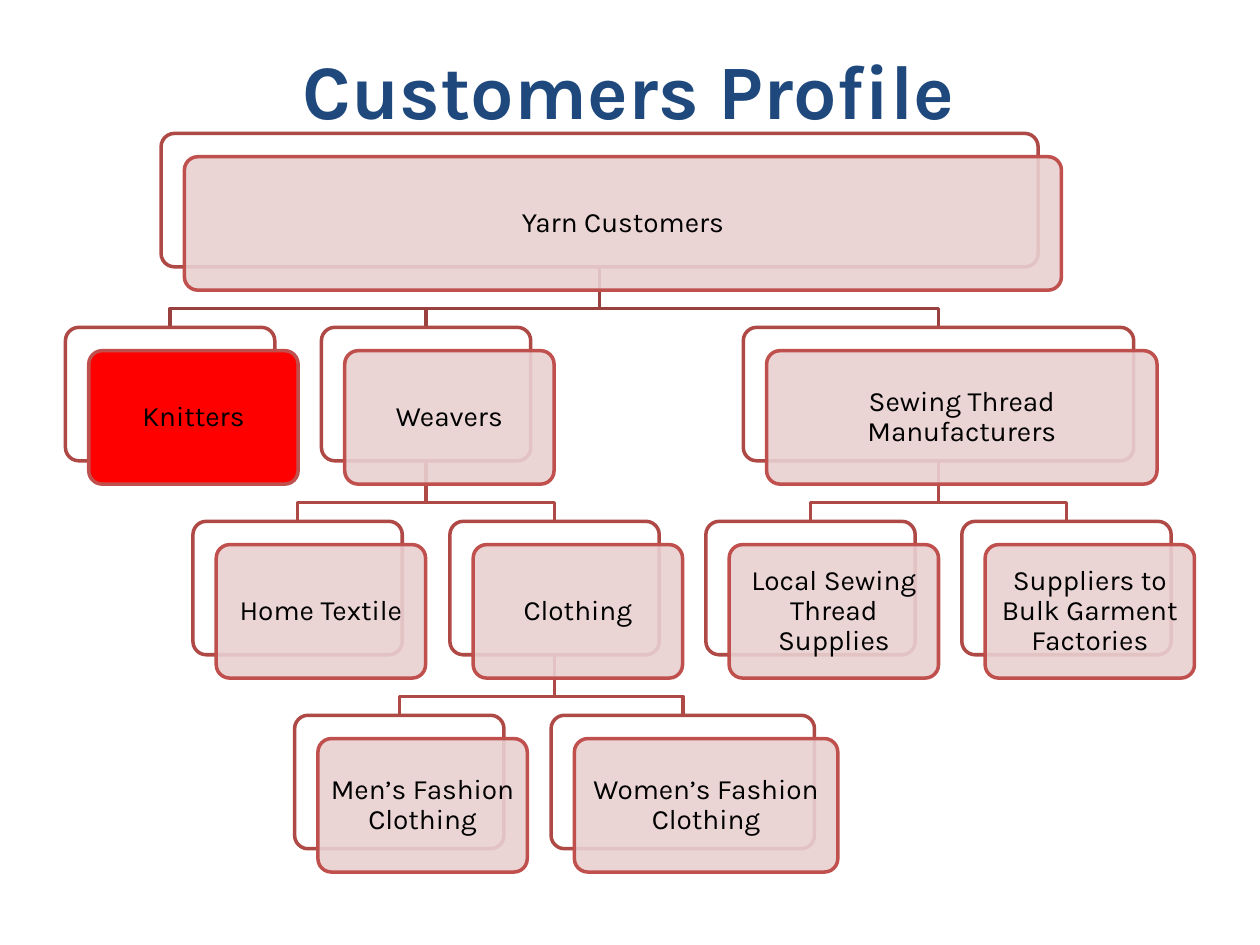
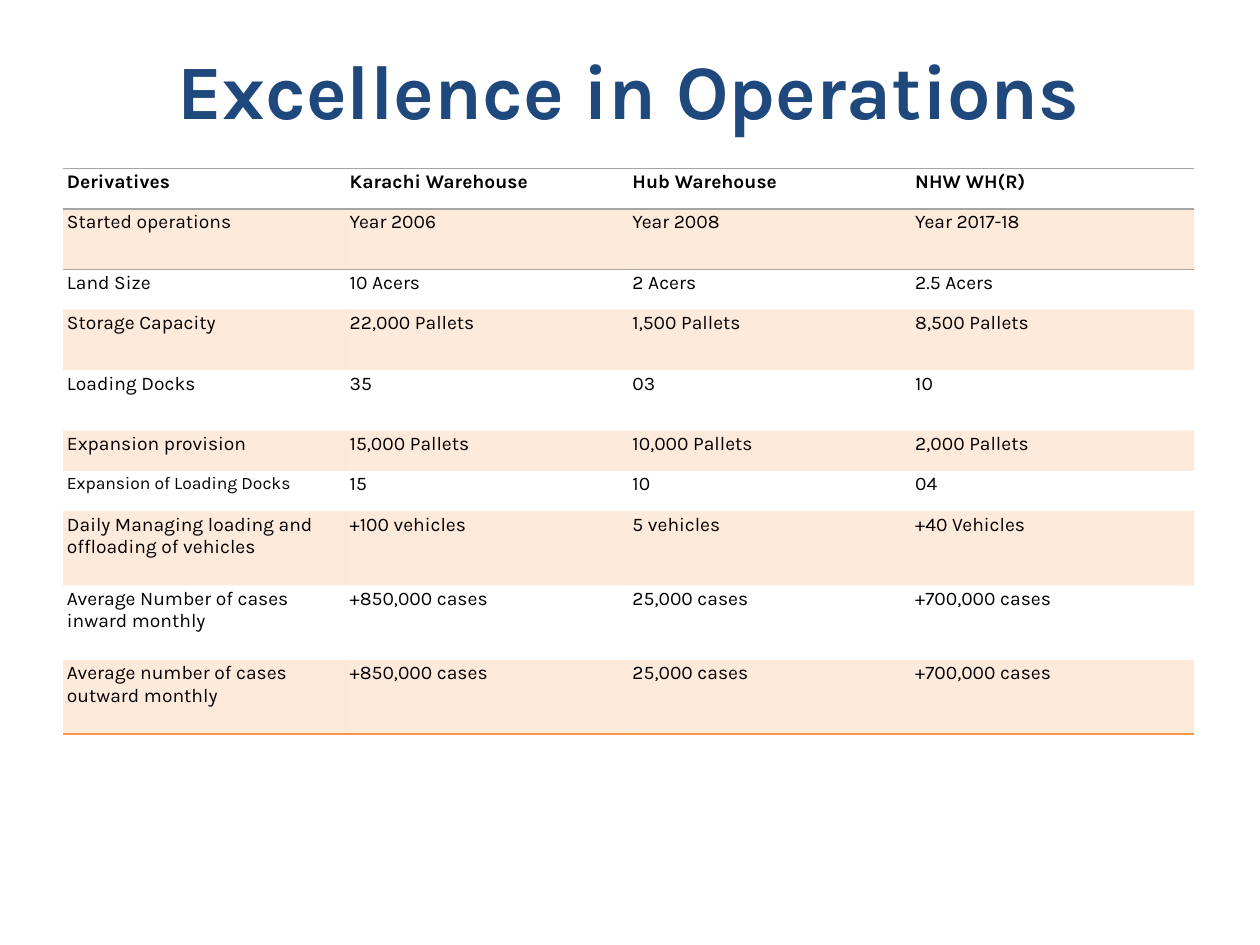
import dataclasses
import pptx
import pptx.dml.color
import pptx.enum.shapes
import pptx.enum.text
import pptx.oxml
import pptx.oxml.ns
import pptx.util
import lxml.etree

Cm = pptx.util.Cm
qn = pptx.oxml.ns.qn


@dataclasses.dataclass(frozen=True)
class Theme:
    font: str = "Karla"
    title: str = "1F497D"
    ink: str = "000000"
    paper: str = "FFFFFF"
    card: str = "E8D0D0"
    highlight: str = "FF0000"
    card_edge: str = "C0504D"
    back_edge: str = "AE4946"
    root_link: str = "9A403E"
    band: str = "F79646"
    header_rule: str = "A5A5A5"
    title_size: float = 44
    card_size: float = 16
    table_size: float = 11
    small_size: float = 10
    line_width: float = 2


@dataclasses.dataclass
class Node:
    text: str
    left: float = 0
    width: float = 4.22
    children: tuple = ()
    highlighted: bool = False

    def __post_init__(self):
        if self.children:
            first = min(child.left for child in self.children)
            last = max(child.left + child.width for child in self.children)
            self.left = (first + last - self.width) / 2

    @property
    def center(self):
        return self.left + self.width / 2


CARD_HEIGHT = 2.69
CARD_OFFSET = 0.47
LEVEL_TOP = 2.69
LEVEL_PITCH = 3.91
LINK_BEND = 0.84

CUSTOMERS = Node("Yarn Customers", width=17.68, children=(
    Node("Knitters", 1.32, highlighted=True),
    Node("Weavers", children=(
        Node("Home Textile", 3.89),
        Node("Clothing", children=(
            Node("Men’s Fashion Clothing", 5.94),
            Node("Women’s Fashion Clothing", 11.11, 5.31),
        )),
    )),
    Node("Sewing Thread Manufacturers", width=7.87, children=(
        Node("Local Sewing Thread Supplies", 14.23),
        Node("Suppliers to Bulk Garment Factories", 19.39),
    )),
))

WAREHOUSE_ROWS = (
    (0.81, "Derivatives", "Karachi Warehouse", "Hub Warehouse", "NHW WH(R)"),
    (1.22, "Started operations", "Year 2006", "Year 2008", "Year 2017-18"),
    (0.81, "Land Size", "10 Acers", "2 Acers", "2.5 Acers"),
    (1.22, "Storage Capacity", "22,000 Pallets", "1,500 Pallets", "8,500 Pallets"),
    (1.22, "Loading Docks", "35", "03", "10"),
    (0.81, "Expansion provision", "15,000 Pallets", "10,000 Pallets", "2,000 Pallets"),
    (0.81, "Expansion of Loading Docks", "15", "10", "04"),
    (1.5, "Daily Managing loading and offloading of vehicles",
     "+100 vehicles", "5 vehicles", "+40 Vehicles"),
    (1.5, "Average Number of cases inward monthly",
     "+850,000 cases", "25,000 cases", "+700,000 cases"),
    (1.5, "Average number of cases outward monthly",
     "+850,000 cases", "25,000 cases", "+700,000 cases"),
)


def rgb(color):
    return pptx.dml.color.RGBColor.from_string(color)


def write_text(frame, text, *, font, size, color, bold=False, align="LEFT",
               anchor="MIDDLE", spacing=1.0):
    frame.word_wrap = True
    frame.vertical_anchor = getattr(pptx.enum.text.MSO_ANCHOR, anchor)
    para = frame.paragraphs[0]
    para.alignment = getattr(pptx.enum.text.PP_ALIGN, align)
    para.line_spacing = spacing
    span = para.add_run()
    span.text = text
    span.font.name = font
    span.font.size = pptx.util.Pt(size)
    span.font.bold = bold
    span.font.color.rgb = rgb(color)


def paint(fill, properties, color, opacity=100):
    fill.solid()
    fill.fore_color.rgb = rgb(color)
    if opacity < 100:
        tint = properties.find(qn("a:solidFill"))[0]
        lxml.etree.SubElement(tint, qn("a:alpha"), val=str(opacity * 1000))


def add_rule(properties, side, color):
    rule = lxml.etree.SubElement(properties, qn(f"a:ln{side}"), w="12700")
    fill = lxml.etree.SubElement(rule, qn("a:solidFill"))
    lxml.etree.SubElement(fill, qn("a:srgbClr"), val=color)


class Board:
    def __init__(self, deck, theme):
        self.deck = deck
        self.theme = theme
        self.page = None

    def start_page(self, title):
        self.page = self.deck.slides.add_slide(self.deck.slide_layouts[6])
        box = self.page.shapes.add_textbox(Cm(0.2), Cm(0.2), Cm(24.97), Cm(3.18))
        write_text(box.text_frame, title, font=self.theme.font, size=self.theme.title_size,
                   color=self.theme.title, bold=True, align="CENTER")

    def outline(self, shape, color):
        shape.shadow.inherit = False
        shape.line.color.rgb = rgb(color)
        shape.line.width = pptx.util.Pt(self.theme.line_width)

    def link(self, start_x, start_y, end_x, end_y, color):
        bend_y = start_y + LINK_BEND
        builder = self.page.shapes.build_freeform(Cm(start_x), Cm(start_y))
        corners = ((start_x, bend_y), (end_x, bend_y), (end_x, end_y))
        builder.add_line_segments([(Cm(x), Cm(y)) for x, y in corners], close=False)
        path = builder.convert_to_shape()
        path.fill.background()
        self.outline(path, color)

    def panel(self, left, top, width, fill, edge, opacity=100):
        shape = self.page.shapes.add_shape(
            pptx.enum.shapes.MSO_SHAPE.ROUNDED_RECTANGLE,
            Cm(left), Cm(top), Cm(width), Cm(CARD_HEIGHT))
        shape.adjustments[0] = 0.1
        paint(shape.fill, shape.element.spPr, fill, opacity)
        self.outline(shape, edge)
        return shape

    def card(self, node, top):
        theme = self.theme
        self.panel(node.left, top, node.width, theme.paper, theme.back_edge)
        fill, opacity = (theme.highlight, 100) if node.highlighted else (theme.card, 90)
        front = self.panel(node.left + CARD_OFFSET, top + CARD_OFFSET, node.width,
                           fill, theme.card_edge, opacity)
        frame = front.text_frame
        frame.margin_left = frame.margin_right = Cm(0.18)
        frame.margin_top = frame.margin_bottom = Cm(0.18)
        write_text(frame, node.text, font=theme.font, size=theme.card_size,
                   color=theme.ink, align="CENTER", spacing=0.9)

    def tree_links(self, node, level=0):
        top = LEVEL_TOP + level * LEVEL_PITCH
        color = self.theme.back_edge if level else self.theme.root_link
        for child in reversed(node.children):
            self.tree_links(child, level + 1)
            self.link(node.center, top + CARD_HEIGHT, child.center, top + LEVEL_PITCH, color)

    def tree_cards(self, node, level=0):
        self.card(node, LEVEL_TOP + level * LEVEL_PITCH)
        for child in node.children:
            self.tree_cards(child, level + 1)

    def table(self, rows, left, top, column_width, small_text):
        theme = self.theme
        columns = len(rows[0]) - 1
        height = sum(row[0] for row in rows)
        holder = self.page.shapes.add_table(
            len(rows), columns, Cm(left), Cm(top), Cm(column_width * columns), Cm(height))
        style = next(holder.element.iter(qn("a:tableStyleId")))
        style.text = "{2D5ABB26-0587-4C30-8999-92F81FD0307C}"
        grid = holder.table
        for column in grid.columns:
            column.width = Cm(column_width)
        for index, (row_height, *texts) in enumerate(rows):
            grid.rows[index].height = Cm(row_height)
            for cell, text in zip(grid.rows[index].cells, texts):
                cell.margin_left = cell.margin_right = Cm(0.08)
                cell.margin_top = cell.margin_bottom = Cm(0.05)
                cell.vertical_anchor = pptx.enum.text.MSO_ANCHOR.TOP
                write_text(cell.text_frame, text, font=theme.font, color=theme.ink,
                           size=theme.small_size if text == small_text else theme.table_size,
                           bold=index == 0, anchor="TOP")
                properties = cell._tc.get_or_add_tcPr()
                if index == 0:
                    add_rule(properties, "T", theme.header_rule)
                    add_rule(properties, "B", theme.header_rule)
                elif index == 1:
                    add_rule(properties, "T", theme.header_rule)
                elif index == len(rows) - 1:
                    add_rule(properties, "B", theme.band)
                if index % 2:
                    paint(cell.fill, properties, theme.band, 20)
                else:
                    cell.fill.background()


def main():
    deck = pptx.Presentation()
    deck.slide_width, deck.slide_height = Cm(25.4), Cm(19.05)
    board = Board(deck, Theme())
    board.start_page("Customers Profile")
    board.tree_links(CUSTOMERS)
    board.tree_cards(CUSTOMERS)
    board.start_page("Excellence in Operations")
    board.table(WAREHOUSE_ROWS, left=1.27, top=3.4, column_width=5.7,
                small_text="Expansion of Loading Docks")
    deck.save("out.pptx")


if __name__ == "__main__":
    main()
